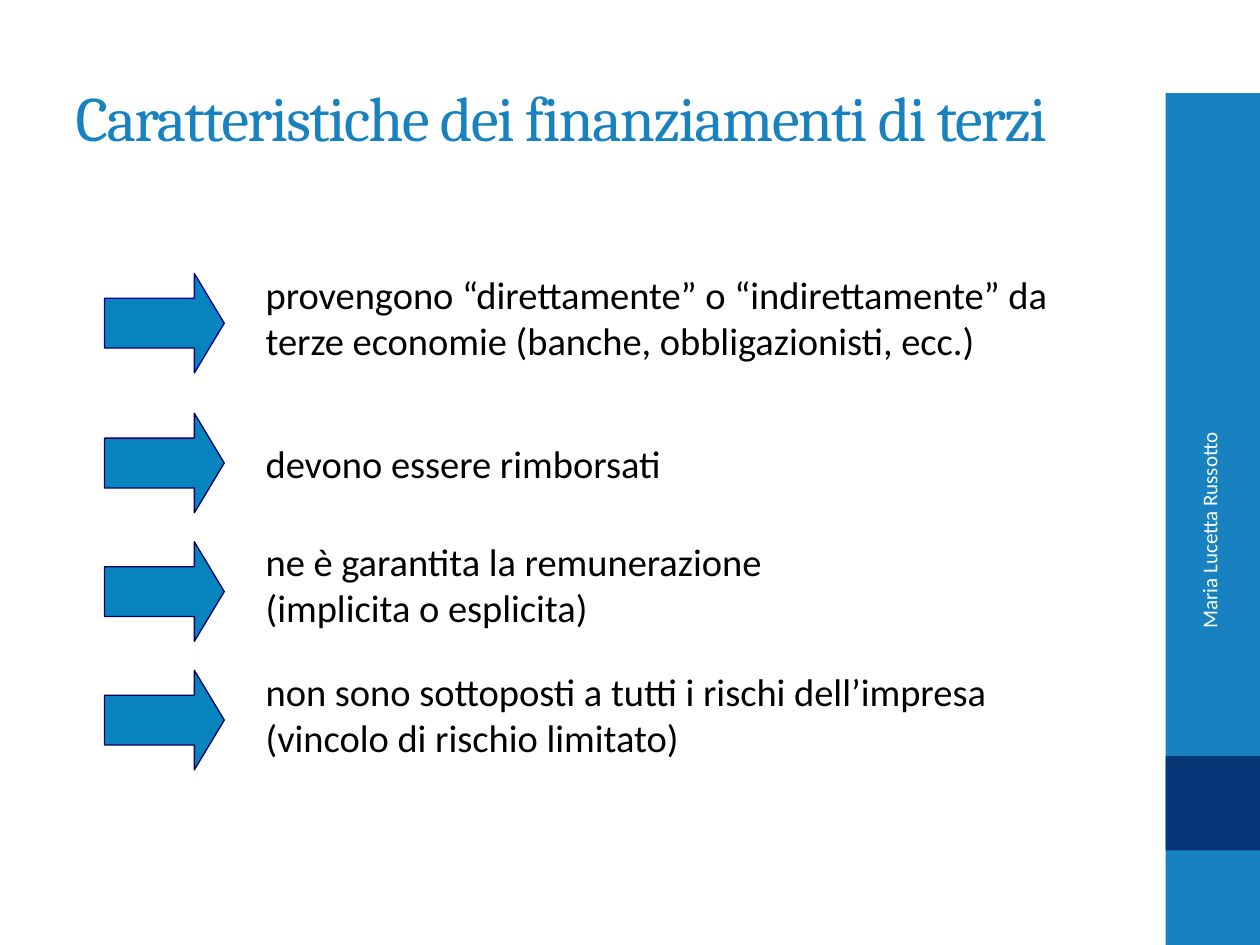
"""Build the slide on the features of third-party financing."""
from dataclasses import dataclass

from pptx import Presentation
from pptx.dml.color import RGBColor
from pptx.enum import shapes, text
from pptx.util import Inches, Pt


@dataclass(frozen=True)
class Theme:
    blue: str = "1782BF"
    navy: str = "073779"
    arrow: str = "0784BE"
    first_edge: str = "000090"
    edge: str = "000066"
    black: str = "000000"
    white: str = "FFFFFF"
    heading: str = "Cambria"
    body: str = "Calibri"
    title_size: int = 36
    item_size: int = 22
    author_size: int = 12


theme = Theme()


def add_block(parent, kind, box, fill, edge=None):
    sp = parent.shapes.add_shape(kind, *map(Inches, box))
    sp.shadow.inherit = False
    sp.fill.solid()
    sp.fill.fore_color.rgb = RGBColor.from_string(fill)
    if edge:
        sp.line.color.rgb = RGBColor.from_string(edge)
        sp.line.width = Pt(0.75)
    else:
        sp.line.fill.background()
    return sp


def set_text(sp, words, font, size, color, align=text.PP_ALIGN.LEFT):
    tf = sp.text_frame
    tf.word_wrap = True
    tf.auto_size = text.MSO_AUTO_SIZE.NONE
    p = tf.paragraphs[0]
    r = p.add_run()
    r.text = words
    p.alignment = align
    p.font.name = font
    p.font.size = Pt(size)
    p.font.color.rgb = RGBColor.from_string(color)
    return r


prs = Presentation()
prs.slide_width, prs.slide_height = Inches(10), Inches(7.5)
s = prs.slides.add_slide(prs.slide_layouts[5])

rect = shapes.MSO_SHAPE.RECTANGLE
add_block(s, rect, (9.25, 0.74, 0.75, 6.76), theme.blue)
add_block(s, rect, (9.25, 6, 0.75, 0.75), theme.navy)

title = s.shapes.title
title.left, title.top = Inches(0.5), Inches(0.3)
title.width, title.height = Inches(8.33), Inches(1.25)
title.text_frame.vertical_anchor = text.MSO_ANCHOR.MIDDLE
r = set_text(title, "Caratteristiche dei finanziamenti di terzi",
             theme.heading, theme.title_size, theme.blue)
r._r.get_or_add_rPr().set("spc", "-100")

items = [
    ("provengono “direttamente” o “indirettamente” da terze economie "
     "(banche, obbligazionisti, ecc.)", 2.1, 7.09, 0.84, 2.17, theme.first_edge),
    ("devono essere rimborsati", 3.44, 5.67, 0.47, 3.28, theme.edge),
    ("ne è garantita la remunerazione (implicita o esplicita)",
     4.22, 4.49, 0.84, 4.3, theme.edge),
    ("non sono sottoposti a tutti i rischi dell’impresa "
     "(vincolo di rischio limitato)", 5.25, 6.11, 0.84, 5.32, theme.edge),
]
for words, top, width, height, arrow_top, edge in items:
    group = s.shapes.add_group_shape()
    label = group.shapes.add_textbox(
        Inches(2.01), Inches(top), Inches(width), Inches(height))
    set_text(label, words, theme.body, theme.item_size, theme.black)
    label.text_frame.auto_size = text.MSO_AUTO_SIZE.SHAPE_TO_FIT_TEXT
    arrow = add_block(group, shapes.MSO_SHAPE.RIGHT_ARROW,
                      (0.83, arrow_top, 0.95, 0.79), theme.arrow, edge)
    arrow.adjustments[0] = 0.5
    arrow.adjustments[1] = 0.3

author = s.shapes.add_textbox(Inches(8.3), Inches(4.43), Inches(2.59), Inches(0.4))
author.rotation = 270
author.text_frame.vertical_anchor = text.MSO_ANCHOR.MIDDLE
set_text(author, "Maria Lucetta Russotto", theme.body, theme.author_size,
         theme.white, text.PP_ALIGN.RIGHT)

prs.save("out.pptx")
